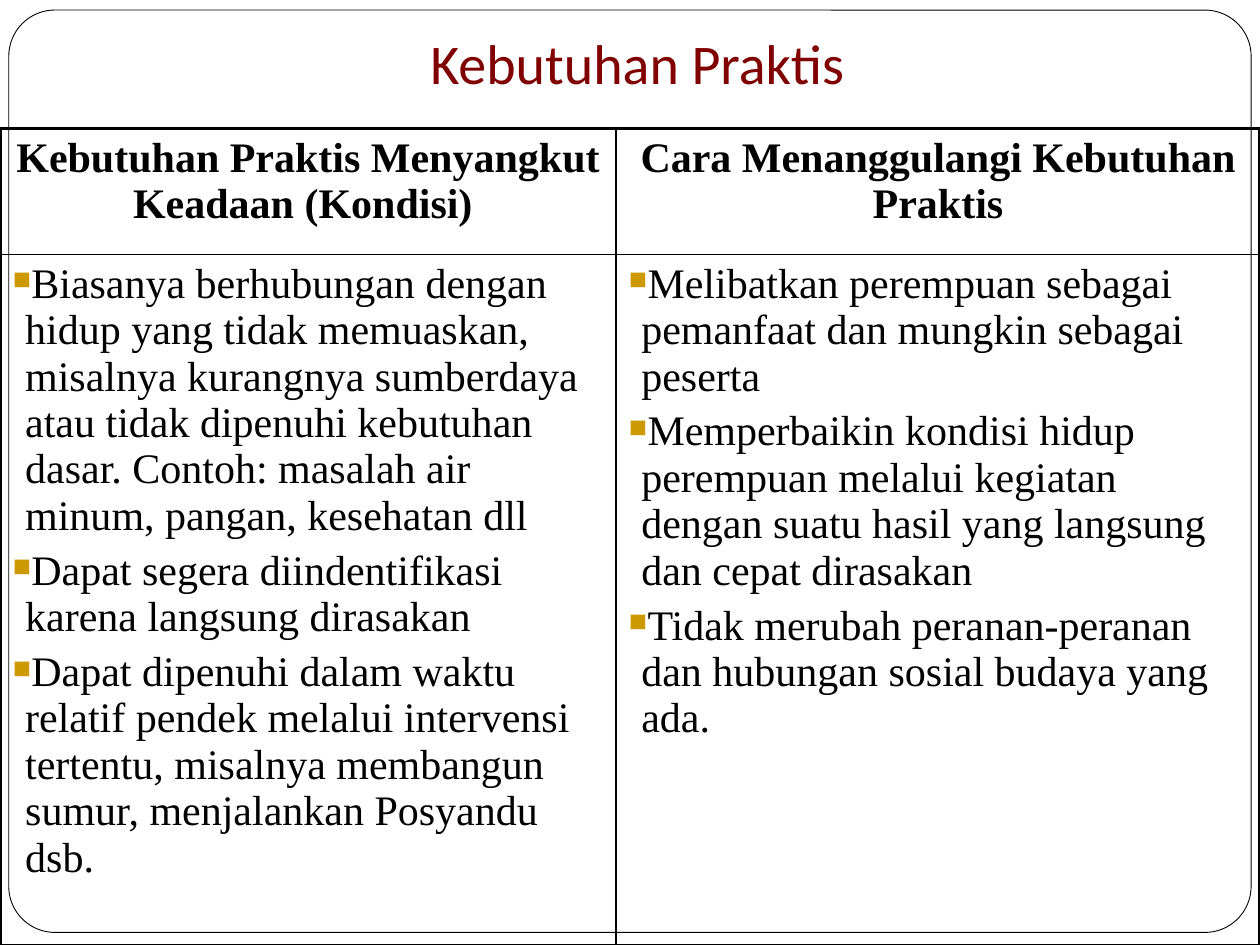
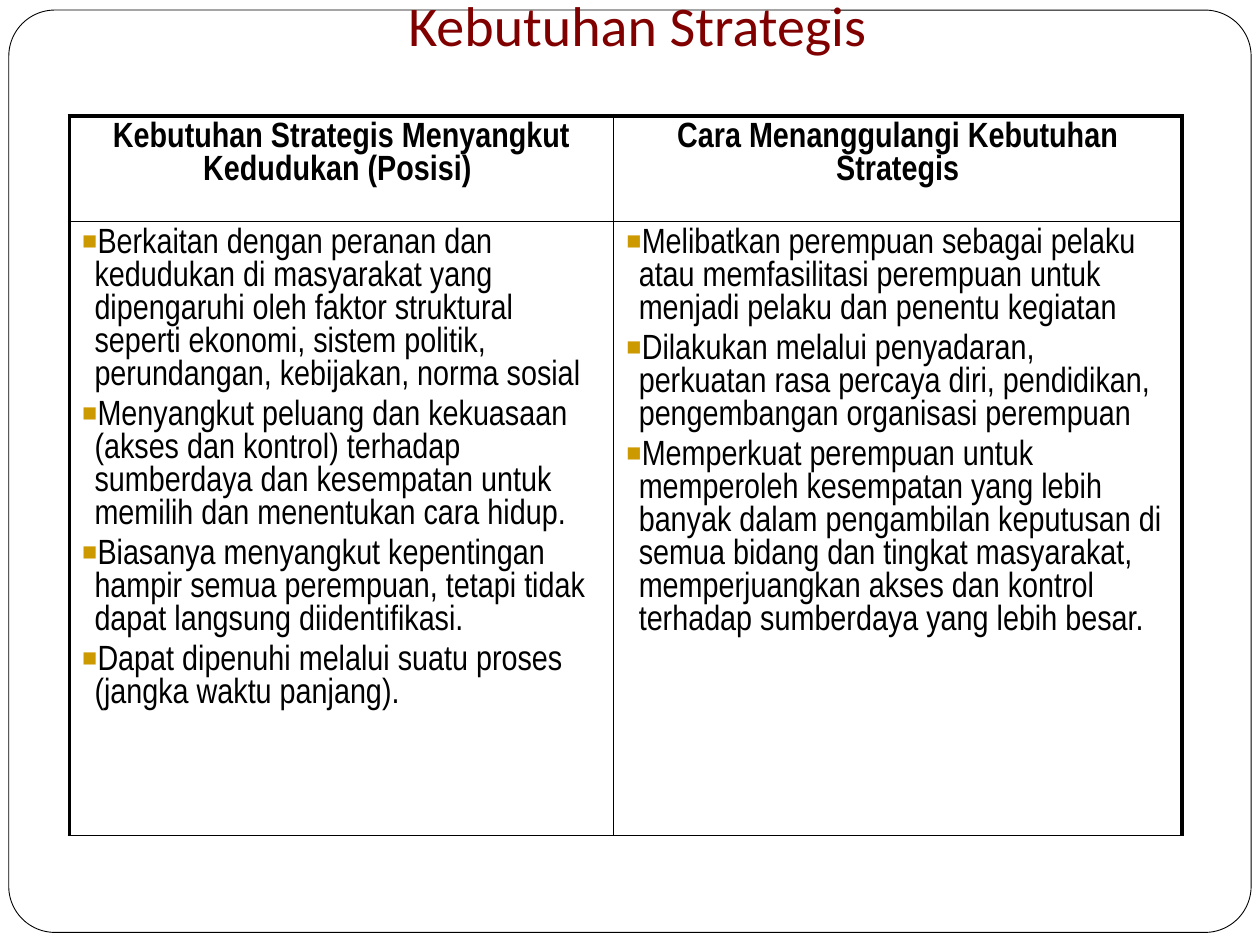
from collections import namedtuple

from lxml import etree
from pptx import Presentation, util as u
from pptx.dml import color
from pptx.enum import shapes, text
from pptx.oxml import ns

COLORS = {"ink": "000000", "title": "800000", "bullet": "CC9900", "paper": "FFFFFF"}
GRID_COLUMNS, GRID_ROWS = 100, 75
OUTER_LINE, INNER_LINE = 2.25, 1
Box = namedtuple("Box", "left top width height")
FRAME_BOX = Box(0.7, 0.8, 98.6, 73.2)

COMPARISONS = [
    {
        "title": "Kebutuhan Praktis ",
        "title_box": Box(0, 3, 102.2, 5.6),
        "table_box": Box(0, 10.2, 100, 64.8),
        "first_column": 48.9,
        "header_row": 10,
        "font": "Times New Roman",
        "size": 24,
        "headers": [
            "Kebutuhan Praktis Menyangkut Keadaan (Kondisi) ",
            "Cara Menanggulangi Kebutuhan Praktis",
        ],
        "lists": [
            [
                "Biasanya berhubungan dengan hidup yang tidak memuaskan, misalnya kurangnya "
                "sumberdaya atau tidak dipenuhi kebutuhan dasar. Contoh: masalah air minum, "
                "pangan, kesehatan dll",
                "Dapat segera diindentifikasi karena langsung dirasakan",
                "Dapat dipenuhi dalam waktu relatif pendek melalui intervensi tertentu, "
                "misalnya membangun sumur, menjalankan Posyandu dsb.",
            ],
            [
                "Melibatkan perempuan sebagai pemanfaat dan mungkin sebagai peserta",
                "Memperbaikin kondisi hidup perempuan melalui kegiatan dengan suatu hasil "
                "yang langsung dan cepat dirasakan",
                "Tidak merubah peranan-peranan dan hubungan sosial budaya yang ada.",
            ],
        ],
    },
    {
        "title": "Kebutuhan Strategis ",
        "title_box": Box(0, 0, 102.2, 5.6),
        "table_box": Box(5.5, 9.2, 88.3, 57.1),
        "first_column": 43.2,
        "header_row": 8.4,
        "font": "Arial Narrow",
        "size": 20,
        "headers": [
            "Kebutuhan Strategis Menyangkut Kedudukan (Posisi) ",
            "Cara Menanggulangi Kebutuhan Strategis",
        ],
        "lists": [
            [
                "Berkaitan dengan peranan dan kedudukan di masyarakat yang dipengaruhi oleh "
                "faktor struktural seperti ekonomi, sistem politik, perundangan, kebijakan, "
                "norma sosial",
                "Menyangkut peluang dan kekuasaan (akses dan kontrol) terhadap sumberdaya dan "
                "kesempatan untuk memilih dan menentukan cara hidup.",
                "Biasanya menyangkut kepentingan hampir semua perempuan, tetapi tidak dapat "
                "langsung diidentifikasi.",
                "Dapat dipenuhi melalui suatu proses (jangka waktu panjang).",
            ],
            [
                "Melibatkan perempuan sebagai pelaku atau memfasilitasi perempuan untuk "
                "menjadi pelaku dan penentu kegiatan",
                "Dilakukan melalui penyadaran, perkuatan rasa percaya diri, pendidikan, "
                "pengembangan organisasi perempuan",
                "Memperkuat perempuan untuk memperoleh kesempatan yang lebih banyak dalam "
                "pengambilan keputusan di semua bidang dan tingkat masyarakat, memperjuangkan "
                "akses dan kontrol terhadap sumberdaya yang lebih besar.",
            ],
        ],
    },
]


def rgb(name):
    return color.RGBColor.from_string(COLORS[name])


def grid(length):
    return u.Inches(length / 10)


def place(box):
    return [grid(length) for length in box]


def add_child(parent, tag, **attributes):
    child = etree.SubElement(parent, ns.qn(tag))
    for name, value in attributes.items():
        child.set(name, str(value))
    return child


def format_runs(paragraph, font_name, size, color_name, bold=False):
    for run in paragraph.runs:
        run.font.name = font_name
        run.font.size = u.Pt(size)
        run.font.bold = bold
        run.font.color.rgb = rgb(color_name)


def add_frame(slide, box):
    frame = slide.shapes.add_shape(shapes.MSO_SHAPE.ROUNDED_RECTANGLE, *place(box))
    frame.adjustments[0] = 0.05
    frame.shadow.inherit = False
    frame.fill.solid()
    frame.fill.fore_color.rgb = rgb("paper")
    frame.line.color.rgb = rgb("ink")
    frame.line.width = u.Pt(0.5)
    slide.slide_layout.shapes.element.insert(2, frame.element)


def set_title(slide, title_text, box):
    title = slide.shapes.title
    title.left, title.top, title.width, title.height = place(box)
    frame = title.text_frame
    frame.text = title_text
    frame.word_wrap = True
    frame.auto_size = text.MSO_AUTO_SIZE.NONE
    frame.vertical_anchor = text.MSO_ANCHOR.BOTTOM
    frame.margin_left = frame.margin_right = frame.margin_bottom = u.Inches(0.1)
    frame.margin_top = u.Inches(0.05)
    frame.paragraphs[0].alignment = text.PP_ALIGN.CENTER
    format_runs(frame.paragraphs[0], "Calibri", 32, "title")


def set_borders(cell, row, column):
    widths = {
        "a:lnL": INNER_LINE if column else OUTER_LINE,
        "a:lnR": OUTER_LINE if column else INNER_LINE,
        "a:lnT": INNER_LINE if row else OUTER_LINE,
        "a:lnB": INNER_LINE,
    }
    properties = cell._tc.get_or_add_tcPr()
    for tag, width in widths.items():
        line = add_child(properties, tag, w=u.Pt(width))
        add_child(add_child(line, "a:solidFill"), "a:srgbClr", val=COLORS["ink"])
    cell.fill.background()


def fill_cell(cell, lines, font_name, size, is_header):
    cell.text_frame.text = "\n".join(lines)
    for paragraph in cell.text_frame.paragraphs:
        properties = paragraph._p.get_or_add_pPr()
        add_child(add_child(properties, "a:spcBef"), "a:spcPct", val=20000)
        if is_header:
            paragraph.alignment = text.PP_ALIGN.CENTER
        else:
            properties.set("marL", str(u.Inches(0.1)))
            properties.set("indent", str(-u.Inches(0.1)))
            add_child(add_child(properties, "a:buClr"), "a:srgbClr", val=COLORS["bullet"])
            add_child(properties, "a:buSzPct", val=60000)
            add_child(properties, "a:buChar", char="■")
        format_runs(paragraph, font_name, size, "ink", bold=is_header)


def add_comparison_table(slide, comparison, box):
    table = slide.shapes.add_table(2, 2, *place(box)).table
    table.first_row = table.horz_banding = False
    first_column, header_row = comparison["first_column"], comparison["header_row"]
    for column, width in zip(table.columns, (first_column, box.width - first_column)):
        column.width = grid(width)
    for row, height in zip(table.rows, (header_row, box.height - header_row)):
        row.height = grid(height)
    contents = [[[header] for header in comparison["headers"]], comparison["lists"]]
    for row, row_contents in enumerate(contents):
        for column, lines in enumerate(row_contents):
            cell = table.cell(row, column)
            fill_cell(cell, lines, comparison["font"], comparison["size"], row == 0)
            set_borders(cell, row, column)


def add_comparison_slide(presentation, comparison):
    slide = presentation.slides.add_slide(presentation.slide_layouts[5])
    set_title(slide, comparison["title"], comparison["title_box"])
    add_comparison_table(slide, comparison, comparison["table_box"])
    return slide


def main():
    presentation = Presentation()
    presentation.slide_width = grid(GRID_COLUMNS)
    presentation.slide_height = grid(GRID_ROWS)
    slides = [add_comparison_slide(presentation, comparison) for comparison in COMPARISONS]
    add_frame(slides[0], FRAME_BOX)
    presentation.save("out.pptx")


if __name__ == "__main__":
    main()
